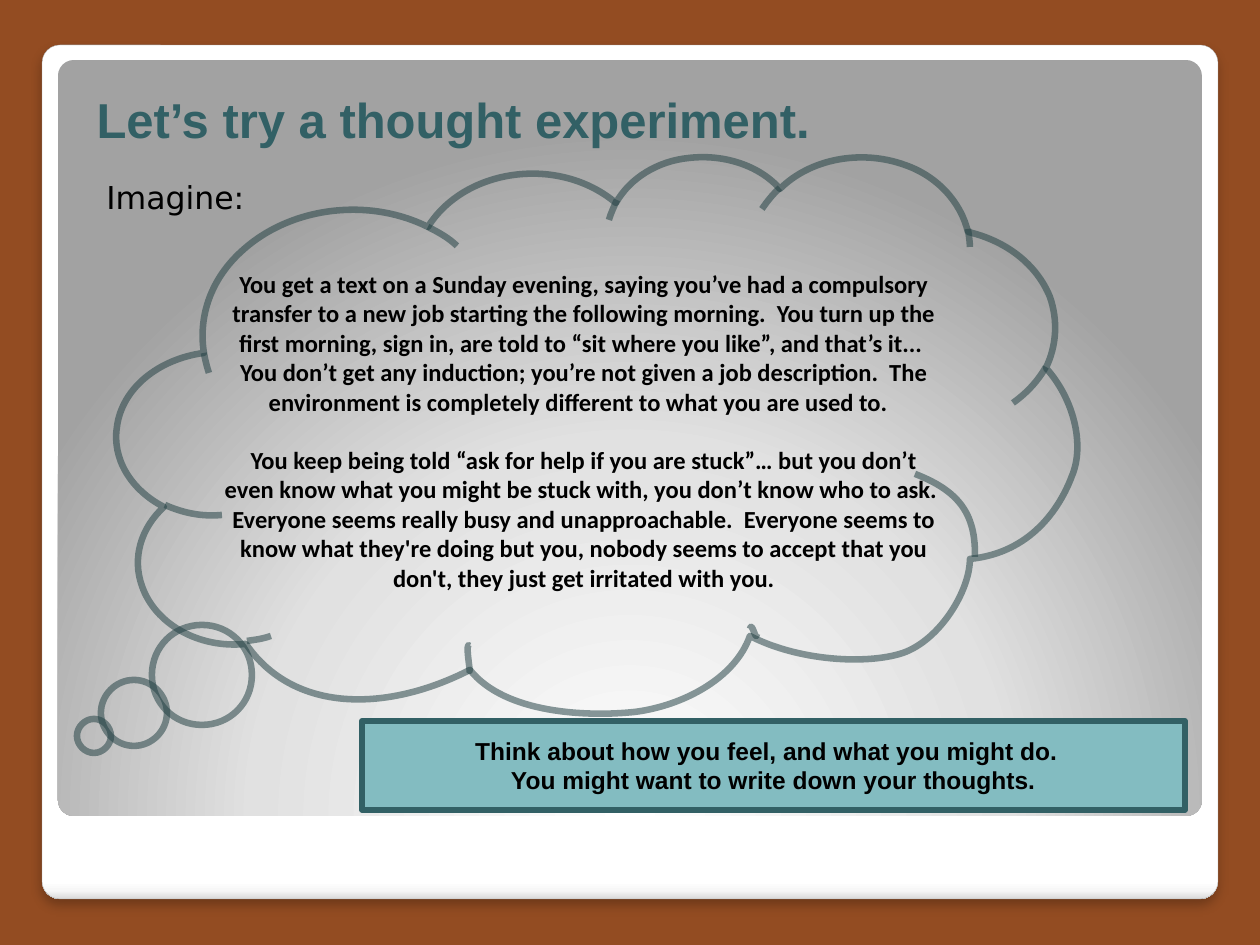
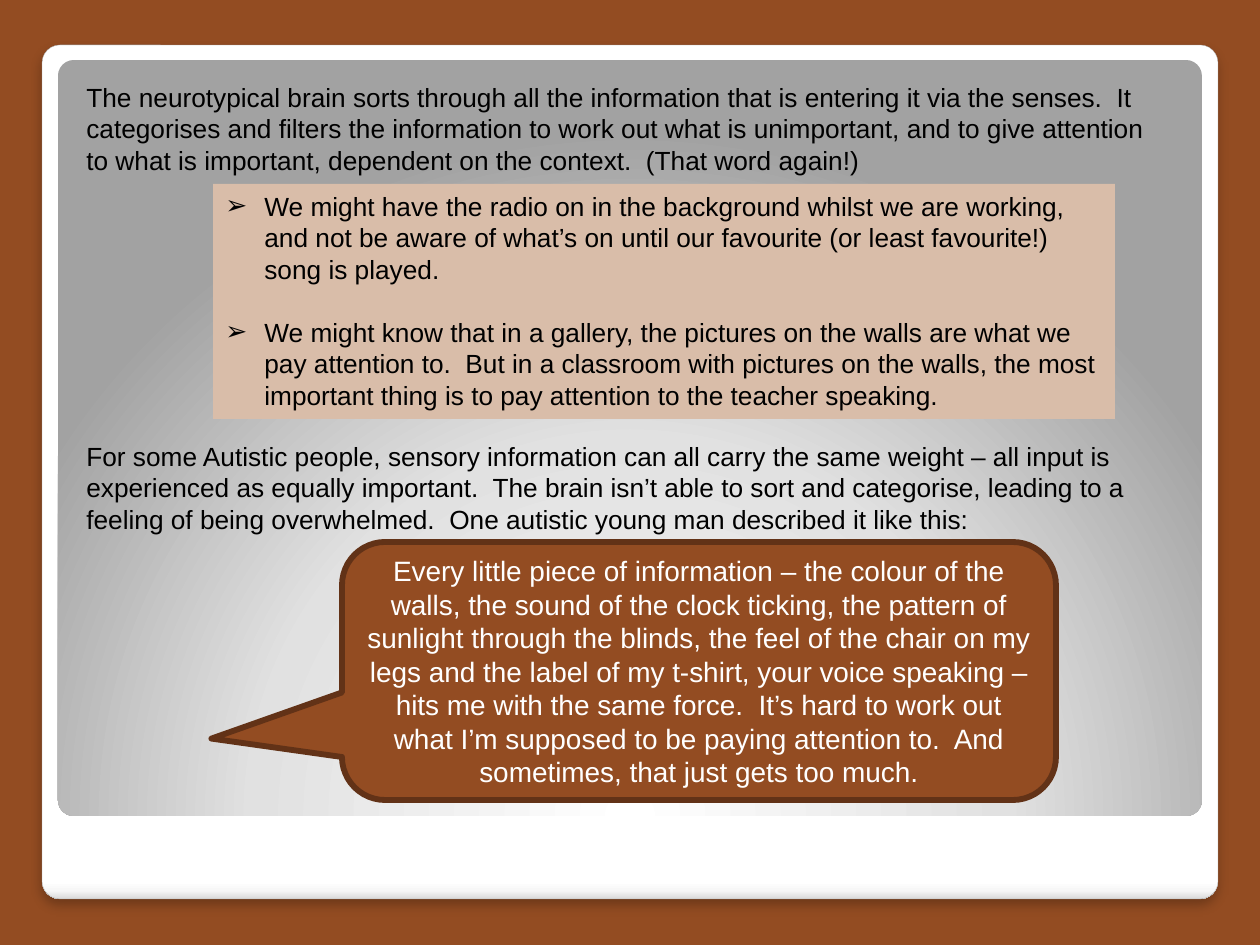
import pptx
import pptx.util
import pptx.oxml
import pptx.oxml.ns
import pptx.dml.color
import pptx.enum.shapes
import pptx.enum.text

RGB = pptx.dml.color.RGBColor
SHAPE = pptx.enum.shapes.MSO_SHAPE
ANCHOR = pptx.enum.text.MSO_ANCHOR
ALIGN = pptx.enum.text.PP_ALIGN
Pt = pptx.util.Pt
qn = pptx.oxml.ns.qn
NS = 'xmlns:a="http://schemas.openxmlformats.org/drawingml/2006/main"'

# Shared colours and scale
RUST = RGB(0x93, 0x4C, 0x22)
DARK_RUST = RGB(0x62, 0x32, 0x17)
SAND = RGB(0xD9, 0xBD, 0xA9)
TEAL = RGB(0x32, 0x60, 0x65)
LIGHT_TEAL = RGB(0x83, 0xBC, 0xC1)
CLOUD_INK = RGB(0x22, 0x40, 0x43)
EDGE = RGB(0xA4, 0xA4, 0xA4)
BLACK = RGB(0, 0, 0)
WHITE = RGB(255, 255, 255)
PX = 914400 / 126

# Backdrop: box, gradient stops (percent, colour), gradient direction
CARD = ((42, 45, 1176, 854),
        [(0, "FFFFFF"), (98, "FFFFFF"), (99, "F7F7F7"), (100, "DADADA")],
        '<a:lin ang="5400000" scaled="0"/>')
PANEL = ((58, 60, 1144, 756),
         [(0, "FFFFFF"), (55, "E1E1E1"), (100, "A2A2A2")],
         '<a:path path="circle"><a:fillToRect l="50000" t="175000" '
         'r="50000" b="-75000"/></a:path>')
CARD_SHADOW = (f'<a:outerShdw {NS} blurRad="76200" dist="50800" dir="5400000" '
               'algn="tl" rotWithShape="0"><a:srgbClr val="000000">'
               '<a:alpha val="25000"/></a:srgbClr></a:outerShdw>')

# Slide 1 content
TITLE = "Let’s try a thought experiment."
IMAGINE = "Imagine:"
THOUGHTS = [
    "You get a text on a Sunday evening, saying you’ve had a compulsory "
    "transfer to a new job starting the following morning.  You turn up the "
    "first morning, sign in, are told to “sit where you like”, and that’s "
    "it...  You don’t get any induction; you’re not given a job description.  "
    "The environment is completely different to what you are used to.  ",
    "You keep being told “ask for help if you are stuck”… but you don’t even "
    "know what you might be stuck with, you don’t know who to ask.  Everyone "
    "seems really busy and unapproachable.  Everyone seems to know what "
    "they're doing but you, nobody seems to accept that you don't, they just "
    "get irritated with you.",
]
PROMPT = ["Think about how you feel, and what you might do.  ",
          "You might want to write down your thoughts."]

# Cloud curves: a start point, then (control, control, end) triples
CLOUD_OUTLINE = [
    (204, 353),
    (198, 315), (212, 278), (242, 251), (290, 207), (368, 197), (428, 227),
    (465, 168), (559, 155), (616, 203), (630, 178), (658, 161), (689, 158),
    (723, 154), (759, 165), (780, 189), (810, 159), (861, 149), (905, 165),
    (937, 176), (961, 202), (968, 232), (1007, 241), (1037, 265), (1050, 297),
    (1058, 320), (1057, 345), (1046, 368), (1074, 399), (1085, 445), (1072, 476),
    (1060, 508), (1031, 553), (970, 559), (970, 591), (940, 640), (903, 653),
    (867, 665), (798, 661), (750, 636), (735, 679), (682, 706), (635, 712),
    (588, 717), (505, 714), (470, 670), (388, 712), (294, 714), (246, 644),
    (199, 649), (155, 624), (142, 586), (132, 558), (141, 528), (164, 507),
    (131, 490), (112, 459), (117, 427), (122, 388), (159, 359), (204, 353),
]
CLOUD_FOLDS = [
    [(222, 515), (202, 517), (183, 513), (165, 505)],
    [(271, 636), (263, 639), (254, 640), (247, 641)],
    [(470, 646), (464, 639), (472, 678), (469, 670)],
    [(757, 634), (756, 643), (752, 620), (750, 629)],
    [(915, 474), (959, 491), (976, 514), (975, 557)],
    [(1046, 367), (1038, 381), (1027, 393), (1013, 403)],
    [(968, 229), (969, 236), (970, 242), (970, 247)],
    [(762, 209), (767, 202), (772, 195), (780, 188)],
    [(609, 220), (611, 213), (614, 207), (617, 200)],
    [(428, 227), (438, 232), (449, 238), (457, 246)],
    [(209, 373), (207, 367), (205, 359), (204, 353)],
]
BUBBLES = [(94, 736, 17), (134, 713, 33), (202, 675, 50)]  # centre, radius

# Slide 2 content
PASSAGES = [  # top, text
    (75, "The neurotypical brain sorts through all the information that is "
         "entering it via the senses.  It categorises and filters the "
         "information to work out what is unimportant, and to give attention "
         "to what is important, dependent on the context.  (That word again!)"),
    (434, "For some Autistic people, sensory information can all carry the "
          "same weight – all input is experienced as equally important.  The "
          "brain isn’t able to sort and categorise, leading to a feeling of "
          "being overwhelmed.  One autistic young man described it like this:"),
]
EXAMPLES = [
    "We might have the radio on in the background whilst we are working, and "
    "not be aware of what’s on until our favourite (or least favourite!) song "
    "is played.",
    "We might know that in a gallery, the pictures on the walls are what we "
    "pay attention to.  But in a classroom with pictures on the walls, the "
    "most important thing is to pay attention to the teacher speaking.",
]
QUOTE = ("Every little piece of information – the colour of the walls, the "
         "sound of the clock ticking, the pattern of sunlight through the "
         "blinds, the feel of the chair on my legs and the label of my "
         "t-shirt, your voice speaking – hits me with the same force.  It’s "
         "hard to work out what I’m supposed to be paying attention to.  And "
         "sometimes, that just gets too much.")


# Helpers
def emu(*lengths):
    return [round(v * PX) for v in lengths]


def put_text(sp, paragraphs, size, font="Arial", color=BLACK, bold=False,
             align=ALIGN.LEFT, anchor=ANCHOR.TOP, gap=0, bullet=None):
    tf = sp.text_frame
    frame = {"word_wrap": True, "vertical_anchor": anchor,
             "auto_size": pptx.enum.text.MSO_AUTO_SIZE.NONE}
    for name, value in frame.items():
        setattr(tf, name, value)
    for i, text in enumerate(paragraphs):
        p = tf.add_paragraph() if i else tf.paragraphs[0]
        p.alignment = align
        p.space_before = Pt(gap if i else 0)
        r = p.add_run()
        r.text = text
        for name, value in {"size": Pt(size), "name": font, "bold": bold}.items():
            setattr(r.font, name, value)
        r.font.color.rgb = color
        if bullet:
            pPr = p._p.get_or_add_pPr()
            indent = emu(39)[0]
            pPr.set("marL", str(indent))
            pPr.set("indent", str(-indent))
            pPr.append(pptx.oxml.parse_xml(f'<a:buFont {NS} typeface="DejaVu Sans"/>'))
            pPr.append(pptx.oxml.parse_xml(f'<a:buChar {NS} char="{bullet}"/>'))


def style(sp, fill=None, line=None, width=0):
    sp.shadow.inherit = False
    if fill is None:
        sp.fill.background()
    else:
        sp.fill.solid()
        sp.fill.fore_color.rgb = fill
    if line is None:
        sp.line.fill.background()
    else:
        sp.line.color.rgb = line
        sp.line.width = Pt(width)
    return sp


def add_box(s, kind, box, **look):
    return style(s.shapes.add_shape(kind, *emu(*box)), **look)


def add_label(s, box, paragraphs, size, **look):
    sp = s.shapes.add_textbox(*emu(*box))
    put_text(sp, paragraphs, size, **look)
    return sp


def add_backdrop(prs, s):
    """Draw the rounded card and panel, then move them to the master."""
    fill = prs.slide_master.background.fill
    fill.solid()
    fill.fore_color.rgb = RUST
    for i, (box, stops, direction) in enumerate((CARD, PANEL)):
        sp = add_box(s, SHAPE.ROUNDED_RECTANGLE, box)
        sp.adjustments[0] = 0.021
        gs = "".join(f'<a:gs pos="{pos * 1000}"><a:srgbClr val="{c}"/></a:gs>'
                     for pos, c in stops)
        spPr = sp.element.spPr
        spPr.replace(spPr.find(qn("a:noFill")), pptx.oxml.parse_xml(
            f'<a:gradFill {NS} rotWithShape="1"><a:gsLst>{gs}</a:gsLst>'
            f'{direction}</a:gradFill>'))
        if i == 0:
            sp.line.color.rgb = EDGE
            sp.line.width = Pt(0.16)
            spPr.find(qn("a:effectLst")).append(pptx.oxml.parse_xml(CARD_SHADOW))
        prs.slide_master.shapes.element.insert(2 + i, sp.element)


def circle_curve(x, y, radius):
    k = round(radius * 0.55)
    r = radius
    offsets = [(r, 0), (r, k), (k, r), (0, r), (-k, r), (-r, k), (-r, 0),
               (-r, -k), (-k, -r), (0, -r), (k, -r), (r, -k), (r, 0)]
    return [(x + dx, y + dy) for dx, dy in offsets]


def add_cloud(s):
    """One freeform: each closed curve is a path, the folds share the last."""
    closed = [CLOUD_OUTLINE] + [circle_curve(*b) for b in BUBBLES]
    curves = closed + CLOUD_FOLDS
    builder = s.shapes.build_freeform(*curves[0][0], scale=PX)
    for i, curve in enumerate(curves):
        if i:
            builder.move_to(*curve[0])
        builder.add_line_segments(curve[3::3], close=i < len(closed))
    sp = style(builder.convert_to_shape(), line=CLOUD_INK, width=3.75)
    spPr = sp.element.spPr

    # Bend every straight segment into its cubic curve
    ends = [pt for curve in curves for pt in curve[::3]]
    left, top = min(x for x, y in ends), min(y for x, y in ends)
    triples = [c[k:k + 3] for c in curves for k in range(1, len(c), 3)]
    for segment, triple in zip(list(spPr.iter(qn("a:lnTo"))), triples):
        pts = "".join(f'<a:pt x="{x - left}" y="{y - top}"/>' for x, y in triple)
        segment.getparent().replace(segment, pptx.oxml.parse_xml(
            f'<a:cubicBezTo {NS}>{pts}</a:cubicBezTo>'))

    # Start a new path after each closed curve
    first = spPr.find(".//" + qn("a:path"))
    size = f'w="{first.get("w")}" h="{first.get("h")}"'
    target = first
    for part in list(first):
        target.append(part)
        if part.tag == qn("a:close"):
            target = pptx.oxml.parse_xml(f'<a:path {NS} {size}/>')
            first.getparent().append(target)
    ink = spPr.find(qn("a:ln")).find(".//" + qn("a:srgbClr"))
    ink.append(pptx.oxml.parse_xml(f'<a:alpha {NS} val="52000"/>'))


# Slides
def thought_slide(s):
    title = s.shapes.title
    box = dict(zip(("left", "top", "width", "height"), emu(84, 76, 1128, 79)))
    for name, value in box.items():
        setattr(title, name, value)
    put_text(title, [TITLE], 28, color=TEAL, bold=True, anchor=ANCHOR.BOTTOM)
    add_cloud(s)
    sp = add_label(s, (211, 223, 746, 454), THOUGHTS, 14, font="Calibri",
                   bold=True, align=ALIGN.CENTER, anchor=ANCHOR.MIDDLE, gap=16.5)
    sp.text_frame.margin_bottom = emu(45)[0]
    add_label(s, (94, 172, 208, 50), [IMAGINE], 18, font="DejaVu Sans")
    sp = add_box(s, SHAPE.RECTANGLE, (362, 721, 823, 89),
                 fill=LIGHT_TEAL, line=TEAL, width=3.35)
    put_text(sp, PROMPT, 14, bold=True, align=ALIGN.CENTER, anchor=ANCHOR.MIDDLE)


def senses_slide(s):
    (top, text), (next_top, next_text) = PASSAGES
    add_label(s, (74, top, 1111, 108), [text], 15)
    sp = add_box(s, SHAPE.RECTANGLE, (213, 184, 902, 235), fill=SAND)
    put_text(sp, EXAMPLES, 15, gap=18, bullet="➢")
    add_label(s, (74, next_top, 1111, 108), [next_text], 15)
    sp = add_box(s, SHAPE.ROUNDED_RECTANGULAR_CALLOUT, (342, 542, 714, 258),
                 fill=RUST, line=DARK_RUST, width=3.35)
    for i, value in enumerate((-0.683, 0.262, 0.167)):
        sp.adjustments[i] = value
    put_text(sp, [QUOTE], 16, color=WHITE, align=ALIGN.CENTER,
             anchor=ANCHOR.MIDDLE)


def main():
    prs = pptx.Presentation()
    prs.slide_width, prs.slide_height = emu(1260, 945)
    title_only, blank = prs.slide_layouts[5], prs.slide_layouts[6]
    s = prs.slides.add_slide(title_only)
    add_backdrop(prs, s)
    thought_slide(s)
    senses_slide(prs.slides.add_slide(blank))
    prs.save("out.pptx")


if __name__ == "__main__":
    main()
